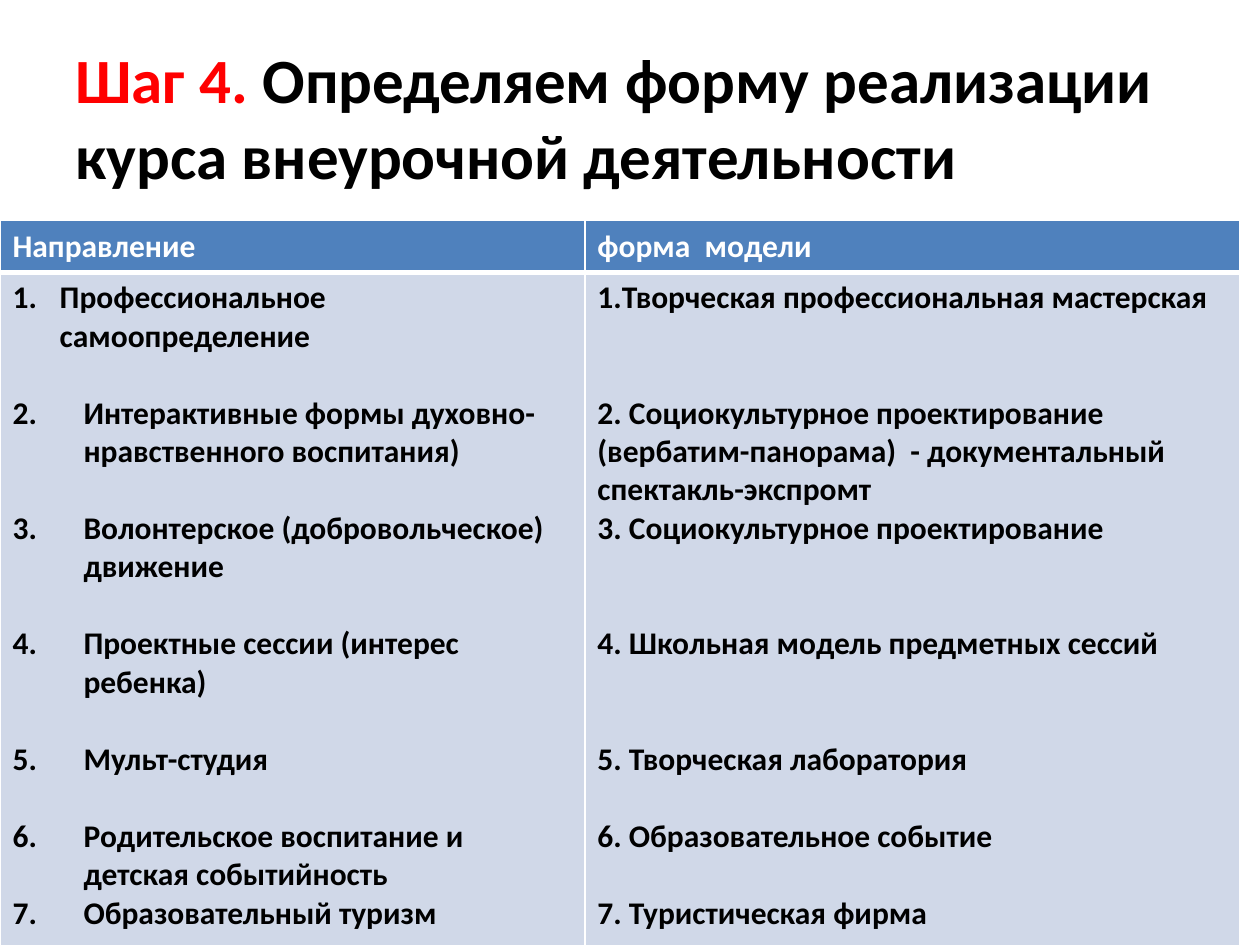
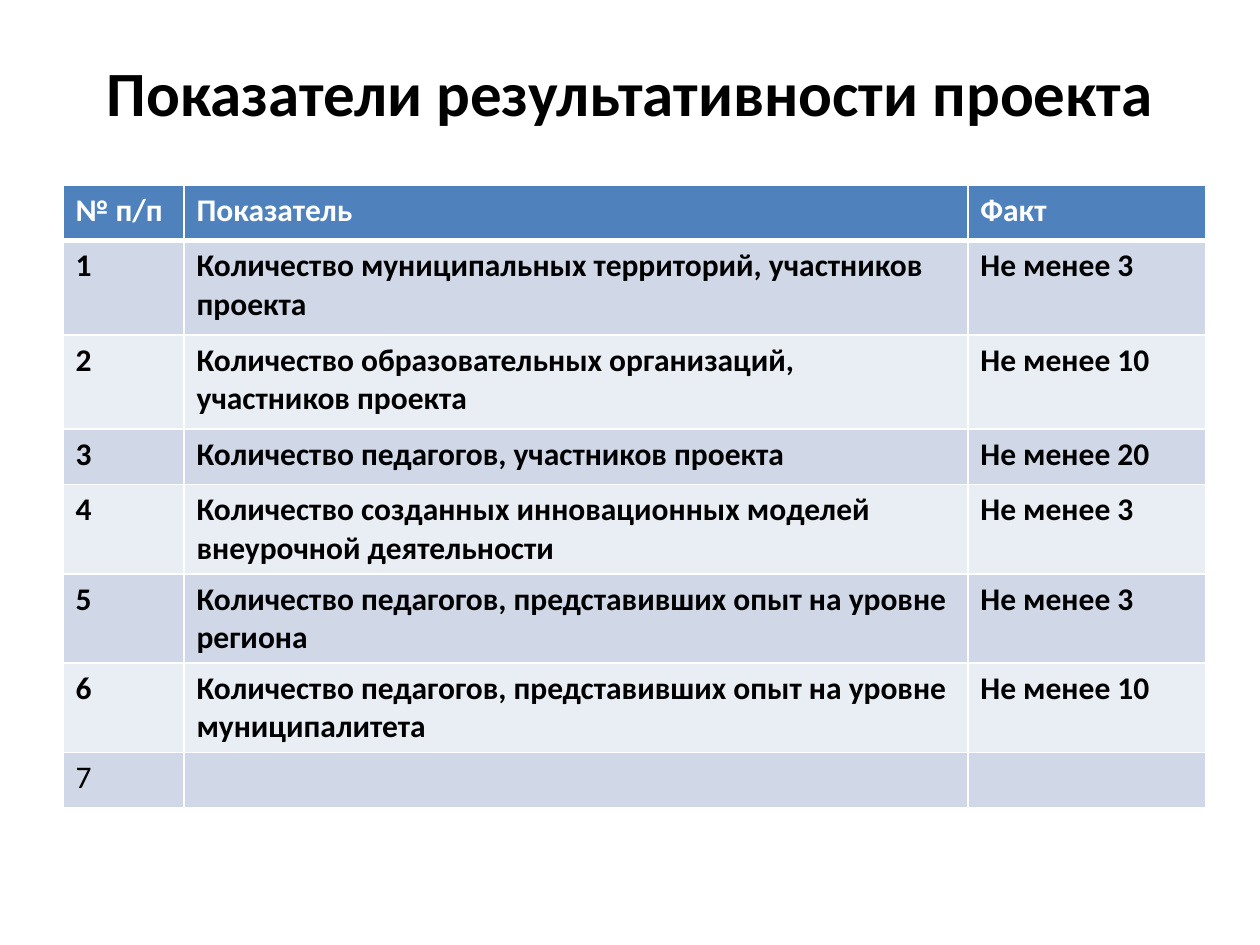
"""Build two slides: forms of extracurricular courses and project indicators."""
from lxml import etree
from pptx import Presentation, util as u
from pptx.dml.color import RGBColor
from pptx.enum import text as t
from pptx.oxml.ns import qn

Cm, Pt = u.Cm, u.Pt
HUE = {"ink": "000000", "red": "FF0000", "white": "FFFFFF",
       "head": "4F81BD", "odd": "D0D8E8", "even": "E9EDF4"}
FONT, LINE = "Calibri", 22


def style(para, size, hue, bold=True):
    for run in para.runs:
        font = run.font
        font.name, font.size, font.bold = FONT, Pt(size), bold
        font.color.rgb = RGBColor.from_string(HUE[hue])


def grid(slide, left, top, cols, rows, data):
    tab = slide.shapes.add_table(len(rows), len(cols), Cm(left), Cm(top),
                                 Cm(sum(cols)), Cm(sum(rows))).table
    for col, wide in zip(tab.columns, cols):
        col.width = Cm(wide)
    for i, (row, high) in enumerate(zip(tab.rows, rows)):
        row.height = Cm(high)
        for cell, words in zip(row.cells, data[i]):
            cell.text_frame.text = words
            for para in cell.text_frame.paragraphs:
                style(para, 18, "ink" if i else "white")
            props = cell._tc.get_or_add_tcPr()
            for side in ("lnL", "lnR", "lnT", "lnB"):
                thick = (i, side) in ((0, "lnB"), (1, "lnT"))
                line = etree.SubElement(props, qn("a:" + side), w=str(Pt(3 if thick else 1)))
                fill = etree.SubElement(line, qn("a:solidFill"))
                etree.SubElement(fill, qn("a:srgbClr"), val=HUE["white"])
            cell.fill.solid()
            band = "head" if i == 0 else "odd" if i % 2 else "even"
            cell.fill.fore_color.rgb = RGBColor.from_string(HUE[band])
    return tab


deck = Presentation()
deck.slide_width, deck.slide_height = Cm(25.4), Cm(19.05)

heads = [
    (["Шаг 4.", " Определяем форму реализации курса внеурочной деятельности"],
     3.18, t.PP_ALIGN.LEFT),
    (["Показатели результативности проекта"], 2.16, t.PP_ALIGN.CENTER),
]
for parts, high, align in heads:
    slide = deck.slides.add_slide(deck.slide_layouts[6])
    frame = slide.shapes.add_textbox(Cm(1.27), Cm(0.76), Cm(22.86), Cm(high)).text_frame
    frame.word_wrap = True
    frame.vertical_anchor = t.MSO_ANCHOR.MIDDLE
    para = frame.paragraphs[0]
    para.alignment = align
    for part in parts:
        para.add_run().text = part
    style(para, 36, "ink")
    if len(parts) > 1:
        para.runs[0].font.color.rgb = RGBColor.from_string(HUE["red"])

forms, marks = deck.slides

paths = [
    ("Профессиональное самоопределение", 1),
    ("Интерактивные формы духовно-нравственного воспитания)", 1),
    ("Волонтерское (добровольческое) движение", 1),
    ("Проектные сессии (интерес ребенка)", 1),
    ("Мульт-студия", 1),
    ("Родительское воспитание и детская событийность", 0),
    ("Образовательный туризм", 0),
]
models = [
    ("1.Творческая профессиональная мастерская", 2),
    ("2. Социокультурное проектирование (вербатим-панорама)  - документальный спектакль-экспромт", 0),
    ("3. Социокультурное проектирование", 2),
    ("4. Школьная модель предметных сессий", 2),
    ("5. Творческая лаборатория", 1),
    ("6. Образовательное событие", 1),
    ("7. Туристическая фирма", 0),
]
body = ["\n".join(words for words, gap in part) for part in (paths, models)]
tab = grid(forms, 0, 4.45, [11.79, 13.21], [1.04, 15.49],
           [["Направление", "форма  модели"], body])
for j, part in enumerate((paths, models)):
    paras = tab.cell(1, j).text_frame.paragraphs
    for k, (para, (words, gap)) in enumerate(zip(paras, part)):
        para.space_after = Pt(gap * LINE)
        if j == 0:
            props = para._p.get_or_add_pPr()
            dent = Cm(1.43 if k else 0.95)
            props.set("marL", str(dent))
            props.set("indent", str(-dent))
            etree.SubElement(props, qn("a:buFont"), typeface="+mj-lt")
            etree.SubElement(props, qn("a:buAutoNum"), type="arabicPeriod")

goals = [
    ("Количество муниципальных территорий, участников проекта", "Не менее 3"),
    ("Количество образовательных организаций, участников проекта", "Не менее 10"),
    ("Количество педагогов, участников проекта", "Не менее 20"),
    ("Количество созданных инновационных моделей внеурочной деятельности", "Не менее 3"),
    ("Количество педагогов, представивших опыт на уровне региона", "Не менее 3"),
    ("Количество педагогов, представивших опыт на уровне муниципалитета", "Не менее 10"),
    ("", ""),
]
data = [("№ п/п", "Показатель", "Факт")]
data += [(str(n), *goal) for n, goal in enumerate(goals, 1)]
tab = grid(marks, 1.27, 3.73, [2.44, 15.8, 4.8],
           [1.12, 1.9, 1.9, 1.12, 1.8, 1.8, 1.8, 1.12], data)
style(tab.cell(7, 0).text_frame.paragraphs[0], 18, "ink", False)

deck.save("out.pptx")
